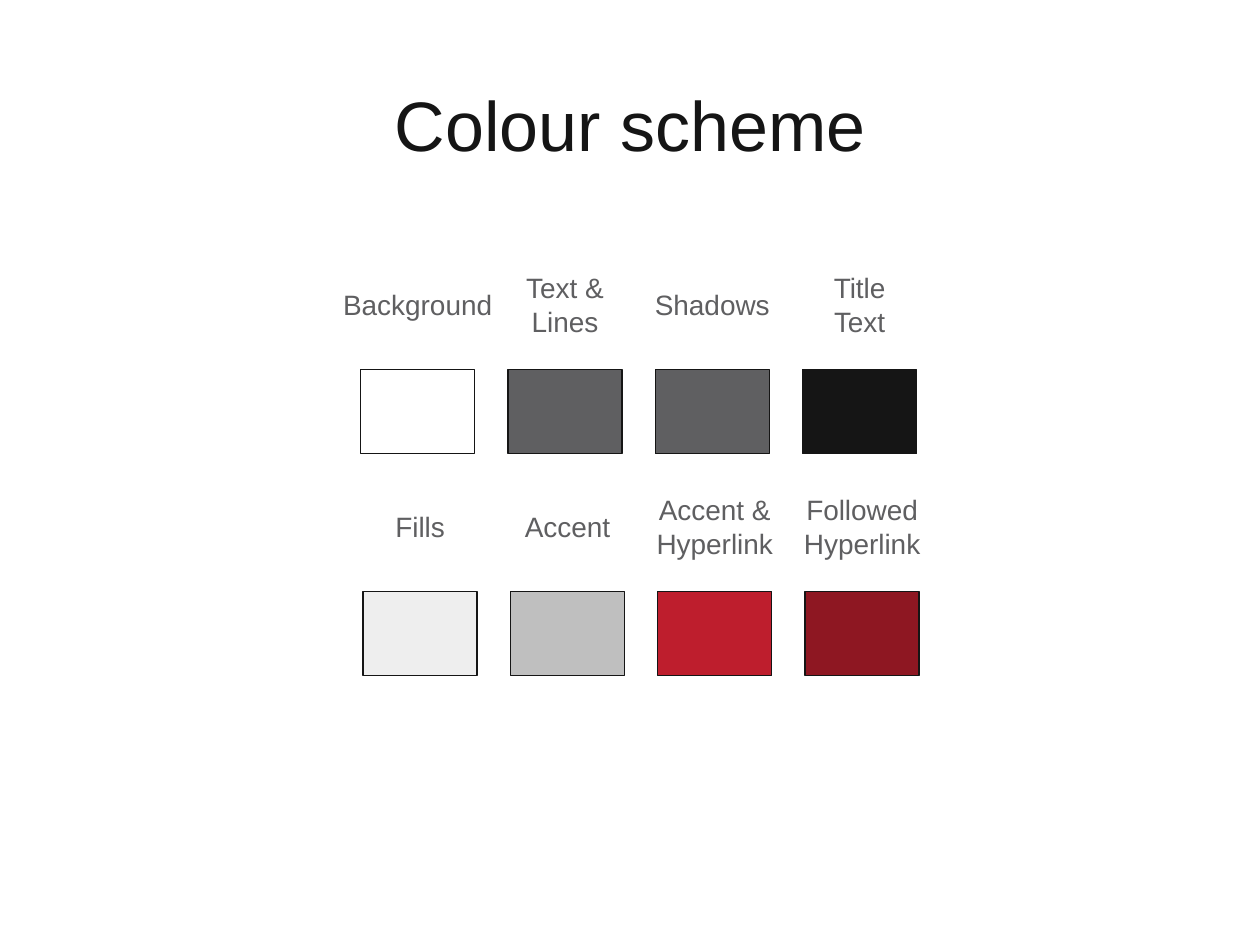
from pptx import Presentation
from pptx.dml.color import RGBColor
from pptx.enum.shapes import MSO_SHAPE
from pptx.enum.text import MSO_ANCHOR, MSO_AUTO_SIZE, PP_ALIGN
from pptx.util import Cm, Pt

RECTANGLE = MSO_SHAPE.RECTANGLE
MIDDLE = MSO_ANCHOR.MIDDLE
CENTER = PP_ALIGN.CENTER
GROW = MSO_AUTO_SIZE.SHAPE_TO_FIT_TEXT

INK, GREY = "151515", "5F5F61"
TITLE = "Colour scheme"
# Each row: left and top in cm, then (label, label width in cm, fill).
# "\n" starts a paragraph, "\v" breaks a line inside one.
ROWS = [
    (7.27, 7.45, [
        ("Background", 3.55, None),
        ("Text &\nLines", 2.15, GREY),
        ("Shadows", 2.85, GREY),
        ("Title\vText", 1.62, INK),
    ]),
    (7.32, 11.92, [
        ("Fills", 1.52, "EEEEEE"),
        ("Accent", 2.26, "BFBFBF"),
        ("Accent &\nHyperlink", 2.9, "BE1E2D"),
        ("Followed\nHyperlink", 2.9, "8E1722"),
    ]),
]
SWATCH_WIDTH, SWATCH_HEIGHT, PITCH = 2.3, 1.7, 2.97
LABEL_RISE = 1.3  # from the swatch top up to the middle of its label
LABEL_HEIGHTS = {1: 0.94, 2: 1.63}  # by number of lines


def rgb(value):
    return RGBColor.from_string(value)


def write(frame, text, size, color, font="Arial"):
    frame.text = text
    for para in frame.paragraphs:
        para.alignment = CENTER
        for span in para.runs:
            span.font.name = font
            span.font.size = Pt(size)
            span.font.color.rgb = rgb(color)


def add_swatch(page, left, top, fill):
    swatch = page.shapes.add_shape(
        RECTANGLE, Cm(left), Cm(top), Cm(SWATCH_WIDTH), Cm(SWATCH_HEIGHT))
    swatch.shadow.inherit = False
    if fill:
        swatch.fill.solid()
        swatch.fill.fore_color.rgb = rgb(fill)
    else:
        swatch.fill.background()
    swatch.line.color.rgb = rgb(INK)
    swatch.line.width = Pt(0.75)


def add_label(page, center, middle, width, text):
    height = LABEL_HEIGHTS[len(text.splitlines())]
    box = page.shapes.add_textbox(
        Cm(center - width / 2), Cm(middle - height / 2), Cm(width), Cm(height))
    box.text_frame.word_wrap = False
    box.text_frame.auto_size = GROW
    write(box.text_frame, text, size=16, color=GREY)


def main():
    deck = Presentation()
    deck.slide_width, deck.slide_height = Cm(25.4), Cm(19.05)
    page = deck.slides.add_slide(deck.slide_layouts[5])
    page.background.fill.solid()
    page.background.fill.fore_color.rgb = rgb("FFFFFF")

    title = page.shapes.title
    title.left, title.top = Cm(1.27), Cm(0.91)
    title.width, title.height = Cm(22.86), Cm(3.18)
    title.text_frame.vertical_anchor = MIDDLE
    write(title.text_frame, TITLE, size=40, color=INK)

    for row_left, top, swatches in ROWS:
        for column, (label, label_width, fill) in enumerate(swatches):
            left = row_left + column * PITCH
            add_swatch(page, left, top, fill)
            add_label(page, left + SWATCH_WIDTH / 2, top - LABEL_RISE,
                      label_width, label)

    deck.save("out.pptx")


if __name__ == "__main__":
    main()
